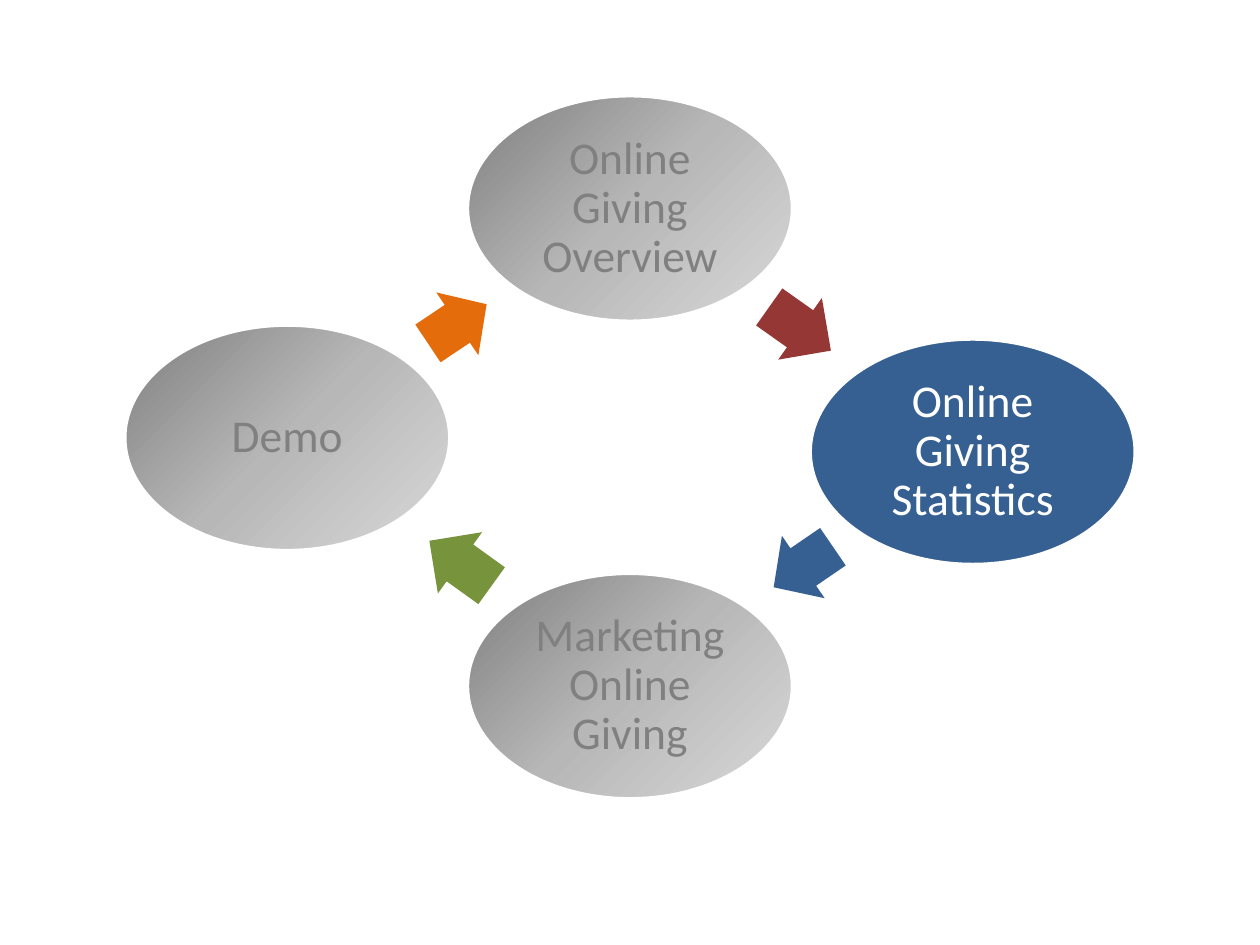
from copy import deepcopy

from pptx import Presentation
from pptx.dml.color import RGBColor
from pptx.enum.shapes import MSO_SHAPE as Preset
from pptx.enum.text import MSO_ANCHOR as Anchor, PP_ALIGN as Align
from pptx.util import Inches, Pt

GRAY = "808080"
WHITE = "FFFFFF"
BLUE = "376092"
FADED_STOPS = [(0, GRAY), (0.5, "B7B7B7"), (1, "D9D9D9")]

OVAL_WIDTH, OVAL_HEIGHT = 2.58, 1.79
ARROW_HEIGHT = 0.6

# text, left, top, highlighted
TOPICS = [
    ("Online Giving Overview", 3.71, 0.76, False),
    ("Online Giving Statistics", 6.43, 2.69, True),
    ("Marketing Online Giving", 3.71, 4.55, False),
    ("Demo", 0.99, 2.58, False),
]
# left, top, width, rotation, colour
ARROWS = [
    (6.05, 2.31, 0.6, 35.3, "953735"),
    (6.09, 4.2, 0.57, 145.6, BLUE),
    (3.35, 4.17, 0.61, 215.8, "77933C"),
    (3.35, 2.27, 0.56, 326.2, "E46C0A"),
]


def rgb(color):
    return RGBColor.from_string(color)


def add_shape(slide, preset, left, top, width, height):
    shape = slide.shapes.add_shape(
        preset, Inches(left), Inches(top), Inches(width), Inches(height))
    shape.shadow.inherit = False
    return shape


def fill_solid(shape, color):
    shape.fill.solid()
    shape.fill.fore_color.rgb = rgb(color)


def fill_faded(shape):
    """Fill with the gray gradient, dark at top left and light at bottom right."""
    fill = shape.fill
    fill.gradient()
    fill.gradient_angle = 315
    # A new gradient has two stops; add a third one.
    last_stop = shape._element.spPr.findall(".//{*}gs")[-1]
    last_stop.addnext(deepcopy(last_stop))
    for stop, (position, color) in zip(fill.gradient_stops, FADED_STOPS):
        stop.position = position
        stop.color.rgb = rgb(color)


def add_topic(slide, text, left, top, highlighted):
    oval = add_shape(slide, Preset.OVAL, left, top, OVAL_WIDTH, OVAL_HEIGHT)
    if highlighted:
        fill_solid(oval, BLUE)
    else:
        fill_faded(oval)
    oval.line.color.rgb = rgb(WHITE)
    oval.line.width = Pt(2)

    frame = oval.text_frame
    frame.word_wrap = True
    frame.vertical_anchor = Anchor.MIDDLE
    for side in ("left", "top", "right", "bottom"):
        setattr(frame, f"margin_{side}", Inches(0.04))
    paragraph = frame.paragraphs[0]
    paragraph.text = text
    paragraph.alignment = Align.CENTER
    paragraph.line_spacing = 0.9
    for name, value in {"name": "Calibri", "size": Pt(26)}.items():
        setattr(paragraph.font, name, value)
    paragraph.font.color.rgb = rgb(WHITE if highlighted else GRAY)


def add_arrow(slide, left, top, width, rotation, color):
    arrow = add_shape(slide, Preset.RIGHT_ARROW, left, top, width, ARROW_HEIGHT)
    arrow.adjustments[0] = 0.6
    arrow.adjustments[1] = 0.5
    arrow.rotation = rotation
    fill_solid(arrow, color)
    arrow.line.fill.background()


def main():
    presentation = Presentation()
    presentation.slide_width = Inches(10)
    presentation.slide_height = Inches(7.5)
    slide = presentation.slides.add_slide(presentation.slide_layouts[6])
    for topic, arrow in zip(TOPICS, ARROWS):
        add_topic(slide, *topic)
        add_arrow(slide, *arrow)
    presentation.save("out.pptx")


if __name__ == "__main__":
    main()
